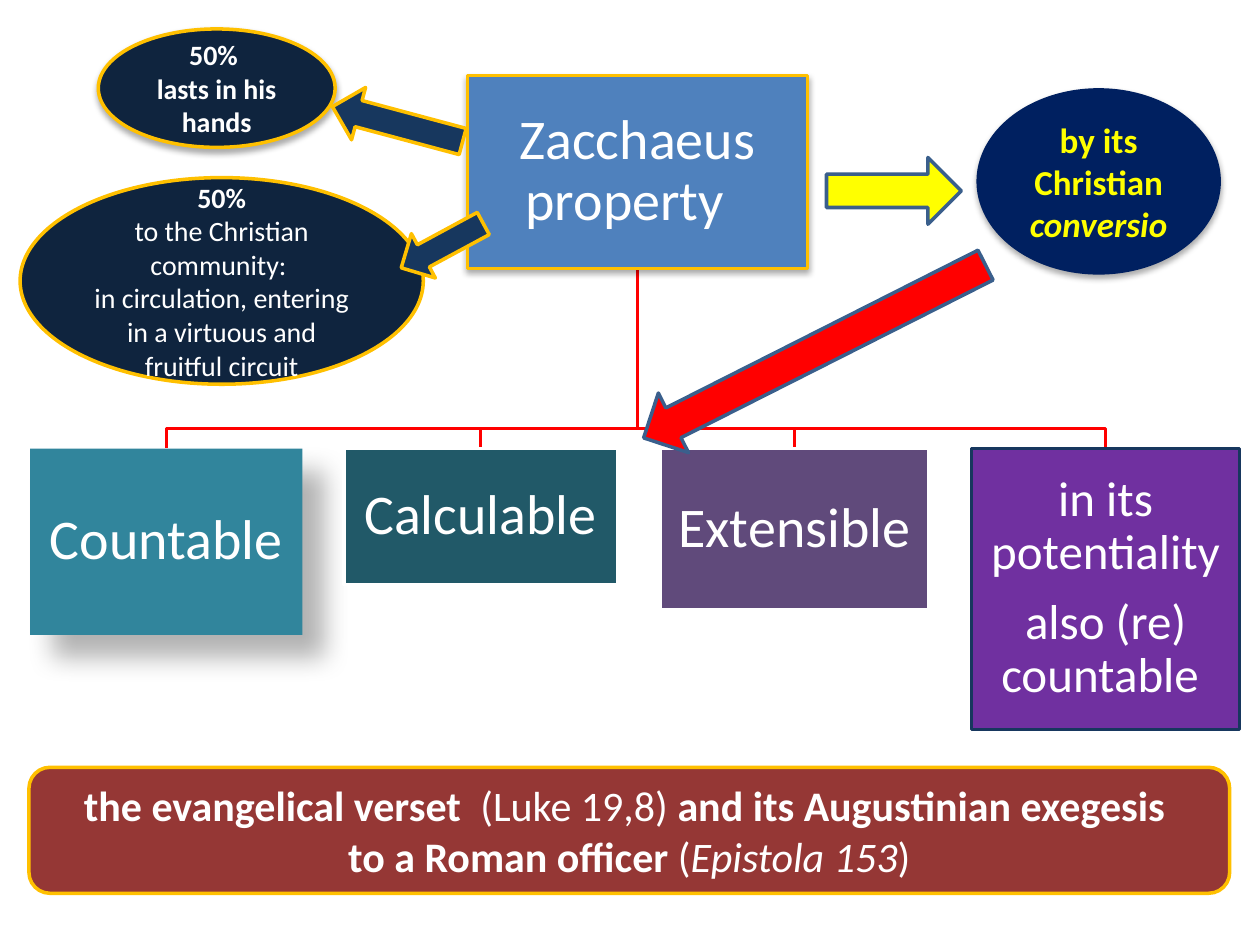
from lxml.etree import SubElement
from pptx import Presentation
from pptx.dml.color import RGBColor
from pptx.enum.shapes import MSO_SHAPE as Shape
from pptx.enum.text import MSO_ANCHOR as Anchor, PP_ALIGN as Align
from pptx.oxml.ns import qn
from pptx.util import Inches, Pt

COLORS = {
    "white": "FFFFFF", "black": "000000", "gold": "FFC000", "yellow": "FFFF00",
    "red": "FF0000", "blue": "4F81BD", "steel": "3A5F8C", "navy": "002060",
    "midnight": "0F243E", "marine": "17375E", "teal": "31859C",
    "petrol": "215968", "plum": "604A7B", "purple": "7030A0", "brick": "953735",
}
COLS, ROWS = 100, 75
WIDTH, HEIGHT = Inches(10), Inches(7.5)
SOFT = (32, 3.5, 2.2, 90)
DEEP = (30, 15, 18, 45)


def rgb(name):
    """Return the palette colour of that name."""
    return RGBColor.from_string(COLORS[name])


def grid(x, y):
    """Turn columns and rows into slide lengths."""
    return round(WIDTH * x / COLS), round(HEIGHT * y / ROWS)


def add_shadow(s, alpha, blur, dist, angle):
    """Give a shape a black outer shadow."""
    effects = s._element.spPr.find(qn("a:effectLst"))
    shadow = SubElement(effects, qn("a:outerShdw"), blurRad=str(Pt(blur)),
                        dist=str(Pt(dist)), dir=str(angle * 60000), rotWithShape="0")
    color = SubElement(shadow, qn("a:srgbClr"), val=COLORS["black"])
    SubElement(color, qn("a:alpha"), val=str(alpha * 1000))


def add_block(slide, kind, at, fill, line=None, shadow=None, rotation=0):
    """Add a filled preset shape placed on the grid."""
    s = slide.shapes.add_shape(kind, *grid(*at[:2]), *grid(*at[2:]))
    s.rotation = rotation
    s.shadow.inherit = False
    s.fill.solid()
    s.fill.fore_color.rgb = rgb(fill)
    if line:
        s.line.color.rgb = rgb(line)
        s.line.width = Pt(2)
    else:
        s.line.fill.background()
    if shadow:
        add_shadow(s, *shadow)
    return s


def write(s, paragraphs, size, color="white"):
    """Write centred paragraphs made of (text, style letters) runs."""
    tf = s.text_frame
    tf.word_wrap = True
    tf.vertical_anchor = Anchor.MIDDLE
    for i, runs in enumerate(paragraphs):
        p = tf.add_paragraph() if i else tf.paragraphs[0]
        p.alignment = Align.CENTER
        for text, style in runs:
            r = p.add_run()
            r.text = text
            r.font.name = "Calibri"
            r.font.size = Pt(size)
            r.font.bold = "b" in style
            r.font.italic = "i" in style
            r.font.color.rgb = rgb(color)


def add_box(slide, at, lines, size, fill, line=None, shadow=None):
    """Add a tree box with tight margins and line spacing."""
    s = add_block(slide, Shape.RECTANGLE, at, fill, line, shadow)
    write(s, [[(text, "")] for text in lines], size)
    tf = s.text_frame
    tf.margin_left = tf.margin_right = tf.margin_top = tf.margin_bottom = Inches(0.02)
    for p in tf.paragraphs:
        p.line_spacing = 0.9
        p.space_after = Pt(size * 0.35)


def add_branch(slide, start, end, bend):
    """Draw an elbow line from a parent box down to a child box."""
    points = [grid(*xy) for xy in (start, (start[0], bend), (end[0], bend), end)]
    builder = slide.shapes.build_freeform(*points[0])
    builder.add_line_segments(points[1:], close=False)
    s = builder.convert_to_shape()
    s.shadow.inherit = False
    s.fill.background()
    s.line.color.rgb = rgb("red")
    s.line.width = Pt(2)


def add_tree(slide):
    """Draw the property box, its branches and its four children."""
    root = (37.1, 6, 27, 15.3)
    top = 35.6
    children = [
        (2.4, 21.6, 14.8, ["Countable"], 32, "teal", None, DEEP),
        (27.3, 21.7, 10.8, ["Calculable"], 32, "petrol", "white", None),
        (52.4, 21.3, 12.8, ["Extensible"], 32, "plum", "white", None),
        (77.1, 21.3, 22.3, ["in its potentiality", "also (re) countable "],
         28, "purple", "marine", None),
    ]
    start = (root[0] + root[2] / 2, root[1] + root[3])
    for left, width, *_ in reversed(children):
        add_branch(slide, start, (left + width / 2, top), 34)
    add_box(slide, root, ["Zacchaeus property  "], 32, "blue", "gold", SOFT)
    for left, width, height, *look in children:
        add_box(slide, (left, top, width, height), *look)


def main():
    """Build the slide and save it."""
    prs = Presentation()
    prs.slide_width, prs.slide_height = WIDTH, HEIGHT
    slide = prs.slides.add_slide(prs.slide_layouts[6])
    add_tree(slide)

    conversion = add_block(slide, Shape.OVAL, (77.5, 7, 19.4, 14.8), "navy", shadow=SOFT)
    write(conversion, [[("by its Christian ", "b"), ("conversio", "bi")]], 20, "yellow")
    add_block(slide, Shape.RIGHT_ARROW, (65.6, 12.5, 10.7, 5.3), "yellow", "steel")
    add_block(slide, Shape.DOWN_ARROW, (62, 12.7, 5.3, 30.4), "red", "steel", rotation=63.2)

    verse = add_block(slide, Shape.ROUNDED_RECTANGLE, (2.3, 60.9, 95.3, 10), "brick", "gold")
    write(verse, [
        [("the evangelical verset  ", "b"), ("(Luke 19,8) ", ""),
         ("and its Augustinian exegesis ", "b")],
        [("to a Roman officer ", "b"), ("(", ""), ("Epistola 153", "i"), (")", "")],
    ], 24)

    community = add_block(slide, Shape.OVAL, (1.6, 14.1, 32, 16.4), "midnight", "gold")
    write(community, [
        [("50%", "b")],
        [("to the Christian community: ", "")],
        [("in circulation, entering in a virtuous and fruitful circuit", "")],
    ], 16)
    kept = add_block(slide, Shape.OVAL, (7.8, 2.3, 18.8, 9.4), "midnight", "gold", SOFT)
    write(kept, [[("50% ", "b")], [("lasts in his hands", "b")]], 16)

    for at, rotation in (((29.4, 4.5, 4.3, 10.7), 105), ((33.1, 15.8, 4, 7.4), 61.6)):
        add_block(slide, Shape.DOWN_ARROW, at, "marine", "gold", rotation=rotation)
    prs.save("out.pptx")


if __name__ == "__main__":
    main()
